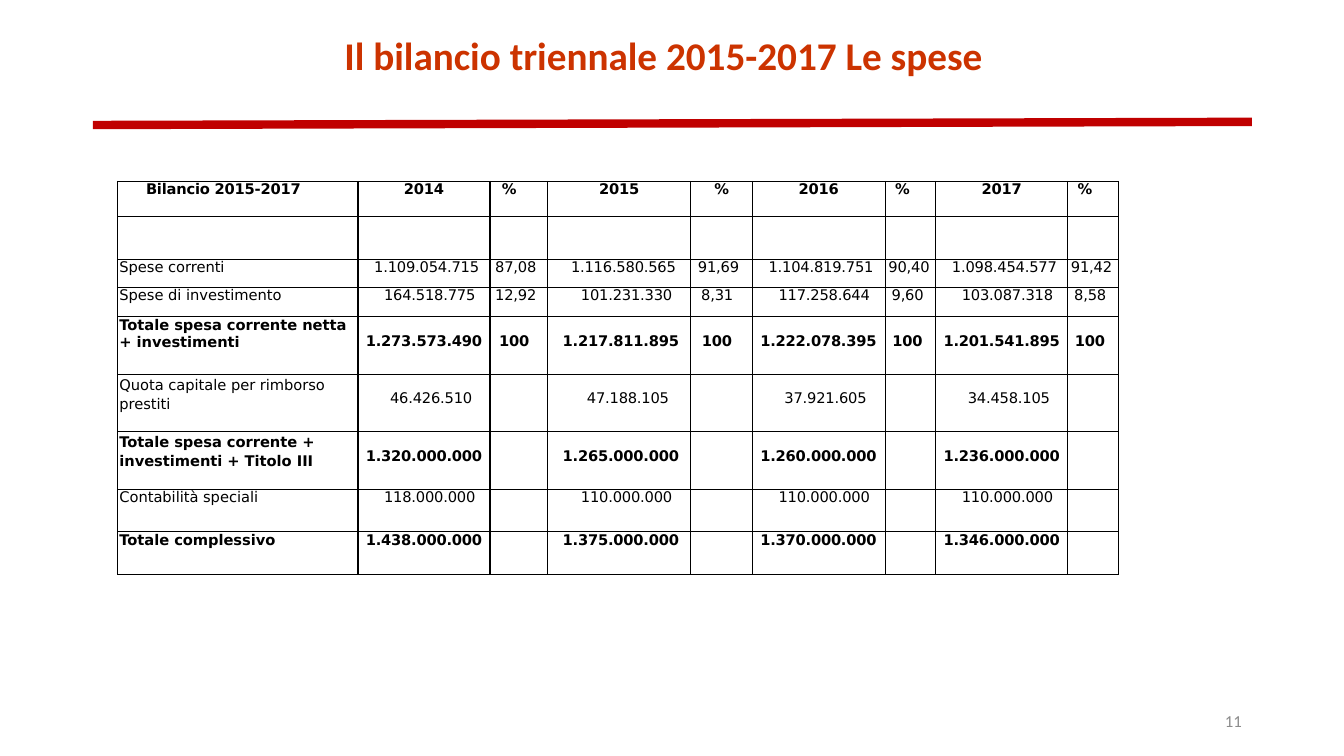
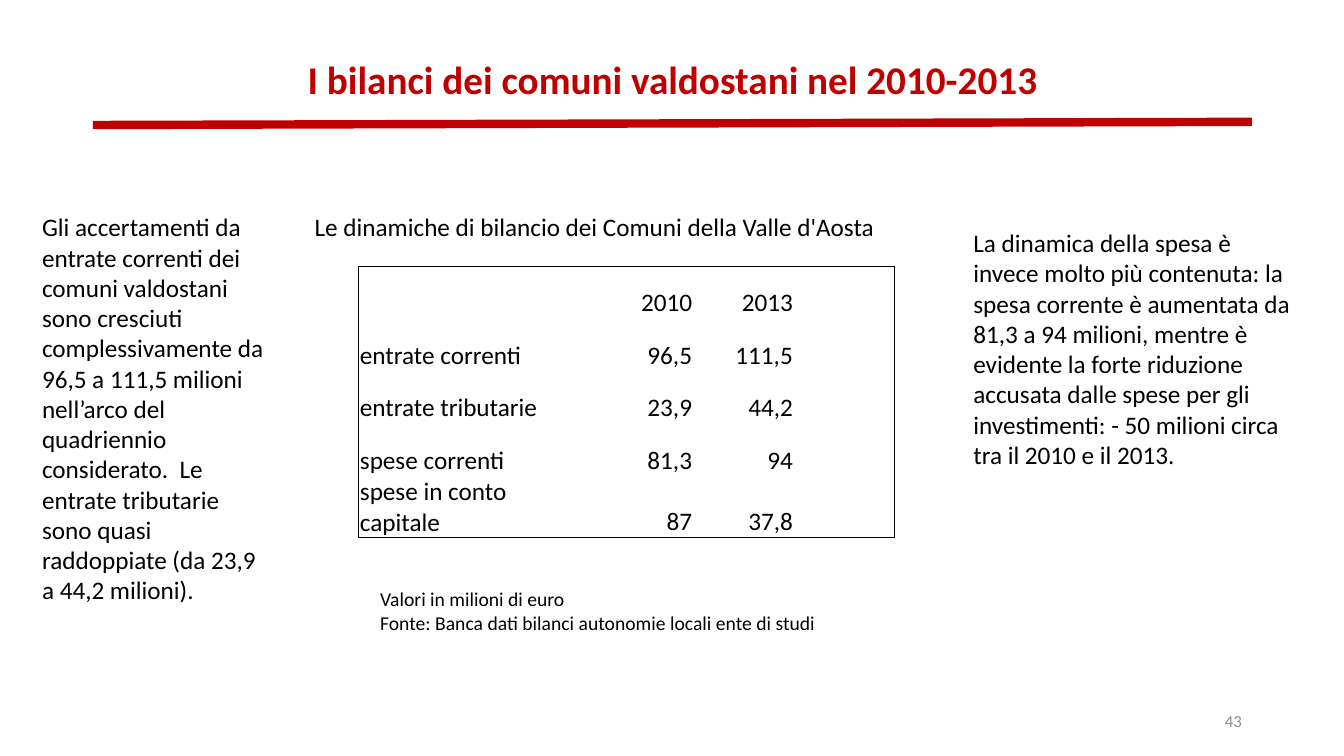
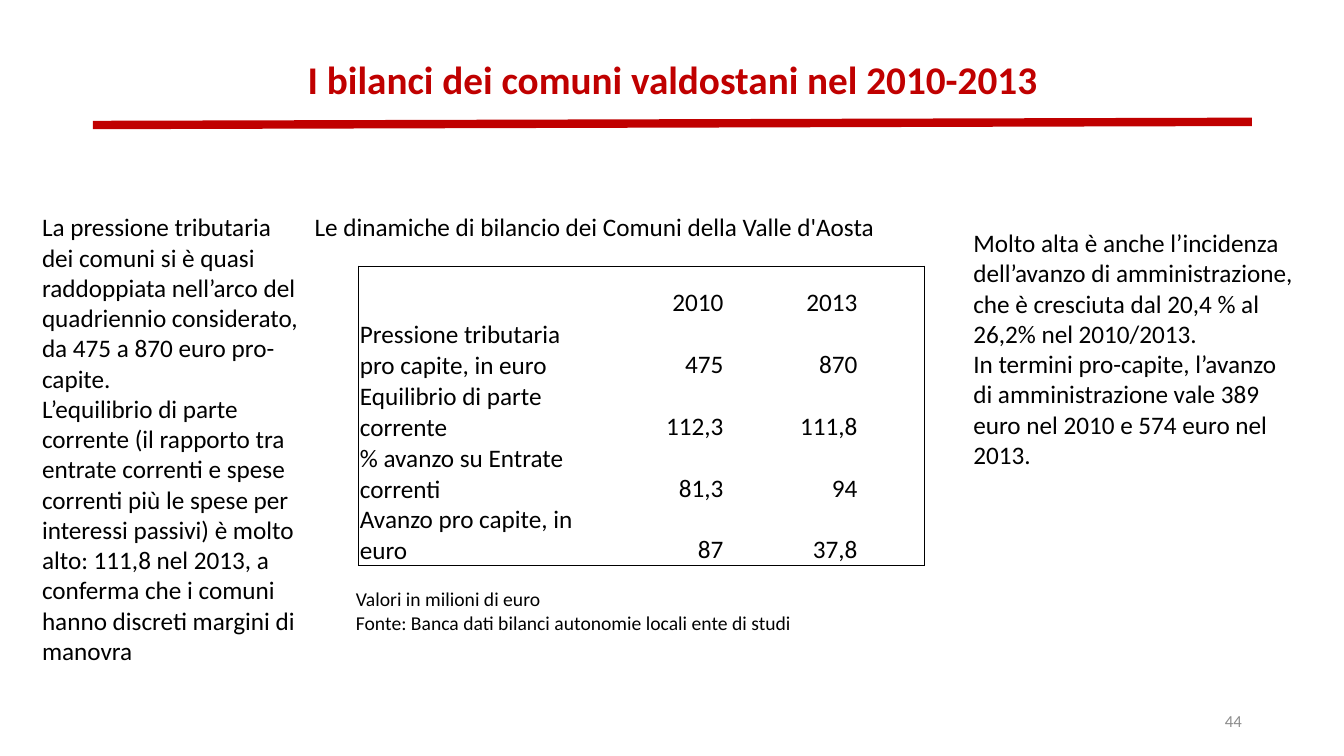
import lxml.etree
import pptx
import pptx.dml.color
import pptx.enum.shapes
import pptx.enum.text
import pptx.oxml.ns
import pptx.util

Cm = pptx.util.Cm
Pt = pptx.util.Pt
ALIGN = pptx.enum.text.PP_ALIGN
ANCHOR = pptx.enum.text.MSO_ANCHOR
qn = pptx.oxml.ns.qn

COLORS = {"rule": "C00000", "accent": "CC3300", "text": "000000", "number": "8C8C8C"}
SANS = "Calibri"
TABLE_FONT = "DejaVu Sans"

BUDGET_HEAD = ["Bilancio 2015-2017", "2014", "%", "2015", "%", "2016", "%", "2017", "%"]
BUDGET_COLS = [6.05, 3.33, 1.45, 3.61, 1.55, 3.35, 1.27, 3.33, 1.27]
BUDGET_ROWS = [
    (0.71, ["Spese correnti"],
     ["1.109.054.715", "1.116.580.565", "1.104.819.751", "1.098.454.577"],
     ["87,08", "91,69", "90,40", "91,42"]),
    (0.74, ["Spese di investimento"],
     ["164.518.775", "101.231.330", "117.258.644", "103.087.318"],
     ["12,92", "8,31", "9,60", "8,58"]),
    (1.45, ["Totale spesa corrente netta", "+ investimenti"],
     ["1.273.573.490", "1.217.811.895", "1.222.078.395", "1.201.541.895"], ["100"] * 4),
    (1.45, ["Quota capitale per rimborso prestiti"],
     ["46.426.510", "47.188.105", "37.921.605", "34.458.105"], [""] * 4),
    (1.45, ["Totale spesa corrente + investimenti + Titolo III"],
     ["1.320.000.000", "1.265.000.000", "1.260.000.000", "1.236.000.000"], [""] * 4),
    (1.07, ["Contabilità speciali"],
     ["118.000.000", "110.000.000", "110.000.000", "110.000.000"], [""] * 4),
    (1.07, ["Totale complessivo"],
     ["1.438.000.000", "1.375.000.000", "1.370.000.000", "1.346.000.000"], [""] * 4),
]
AMOUNT_INDENT = {(False, 13): 0.41, (False, 11): 0.66, (False, 10): 0.81, (True, 13): 0.2}
AMOUNT_SHIFT = [0, 0.18, 0, 0]
PERCENT_BASE = [0.13, 0.18, 0.08, 0.08]
PERCENT_INDENT = {5: 0, 4: 0.08, 3: 0.1}
HEAD_INDENT = {0: 0.71, 2: 0.3, 6: 0.25, 8: 0.25}

MUNICIPAL_SLIDES = [
    {
        "number": "43",
        "cols": [5.89, 2.54, 2.54, 2.54],
        "rows": [
            ["", "2010", "2013", ""],
            ["entrate correnti", "96,5", "111,5", ""],
            ["entrate tributarie", "23,9", "44,2", ""],
            ["spese correnti", "81,3", "94", ""],
            ["spese in conto capitale", "87", "37,8", ""],
        ],
        "note": (9.55, 11.89),
        "left_box": (0.81, 5.21, 6.3, 10.26),
        "left": ["Gli accertamenti da entrate correnti dei comuni valdostani sono cresciuti "
                 "complessivamente da 96,5 a 111,5 milioni  nell’arco del quadriennio "
                 "considerato.  Le entrate tributarie sono quasi raddoppiate "
                 "(da 23,9 a 44,2 milioni)."],
        "right": ["La dinamica della spesa è invece molto più contenuta: la spesa corrente è "
                  "aumentata da 81,3 a 94 milioni, mentre è evidente la forte riduzione "
                  "accusata dalle spese per gli investimenti: - 50 milioni circa tra il 2010 "
                  "e il 2013."],
    },
    {
        "number": "44",
        "cols": [5.64, 3.58, 3.38, 1.65],
        "rows": [
            ["", "2010", "2013", ""],
            ["Pressione tributaria\npro capite, in euro", "475", "870", ""],
            ["Equilibrio di parte corrente", "112,3", "111,8", ""],
            ["% avanzo su Entrate correnti", "81,3", "94", ""],
            ["Avanzo pro capite, in euro", "87", "37,8", ""],
        ],
        "note": (8.94, 12.5),
        "left_box": (0.81, 5.21, 6.99, 11.79),
        "left": ["La pressione tributaria dei comuni si è quasi raddoppiata nell’arco del "
                 "quadriennio considerato, da 475 a 870 euro pro-capite.",
                 "L’equilibrio di parte corrente (il rapporto tra entrate correnti e spese "
                 "correnti più le spese per interessi passivi) è molto alto: 111,8 nel 2013, "
                 "a conferma che i comuni hanno discreti margini di manovra"],
        "right": ["Molto alta è anche l’incidenza dell’avanzo di amministrazione, che è "
                  "cresciuta dal 20,4 % al 26,2% nel 2010/2013.",
                  "In termini pro-capite, l’avanzo di amministrazione vale 389 euro nel 2010 "
                  "e 574 euro nel 2013."],
    },
]


def rgb(name):
    """Return the named colour."""
    return pptx.dml.color.RGBColor.from_string(COLORS[name])


def write(tf, lines, size=18, color="text", font=SANS, bold=False, align=ALIGN.LEFT,
          spacing=None, indent=0, tracking=0):
    """Write one paragraph per line into a text frame."""
    tf.word_wrap = True
    for i, line in enumerate(lines):
        p = tf.add_paragraph() if i else tf.paragraphs[0]
        p.alignment = align
        if spacing:
            p.line_spacing = spacing
        if indent:
            p._p.get_or_add_pPr().set("marL", str(Cm(indent)))
        r = p.add_run()
        r.text = line
        r.font.size = Pt(size)
        r.font.name = font
        r.font.bold = bold
        r.font.color.rgb = rgb(color)
        if tracking:
            r._r.get_or_add_rPr().set("spc", str(tracking))


def add_text(s, box, lines, anchor=ANCHOR.TOP, **style):
    """Add a text box in the given box."""
    tf = s.shapes.add_textbox(*map(Cm, box)).text_frame
    tf.vertical_anchor = anchor
    write(tf, lines, **style)


def set_borders(cell, sides):
    """Draw a black line on the named sides and none on the others."""
    tcPr = cell._tc.get_or_add_tcPr()
    for i, side in enumerate("LRTB"):
        ln = lxml.etree.Element(qn("a:ln" + side), w=str(Pt(1)))
        if side in sides:
            fill = lxml.etree.SubElement(ln, qn("a:solidFill"))
            lxml.etree.SubElement(fill, qn("a:srgbClr"), val=COLORS["text"])
        else:
            lxml.etree.SubElement(ln, qn("a:noFill"))
        tcPr.insert(i, ln)


def add_grid(s, left, top, cols, rows, margin=0.0, anchor=ANCHOR.TOP):
    """Add a plain table with the given column widths and row heights."""
    table = s.shapes.add_table(len(rows), len(cols), Cm(left), Cm(top),
                               Cm(sum(cols)), Cm(sum(rows))).table
    table.first_row = table.horz_banding = False
    for column, width in zip(table.columns, cols):
        column.width = Cm(width)
    for row, height in zip(table.rows, rows):
        row.height = Cm(height)
    for cell in table.iter_cells():
        cell.fill.background()
        cell.margin_left = cell.margin_right = cell.margin_top = Cm(margin)
        cell.margin_bottom = 0
        cell.vertical_anchor = anchor
    return table


def add_frame(prs, title, number, box, color, anchor):
    """Add a slide with its rule, title and number."""
    s = prs.slides.add_slide(prs.slide_layouts[6])
    rule = s.shapes.add_connector(pptx.enum.shapes.MSO_CONNECTOR.STRAIGHT,
                                  Cm(2.34), Cm(3.15), Cm(31.55), Cm(3.07))
    rule.line.color.rgb = rgb("rule")
    rule.line.width = Pt(6)
    lxml.etree.SubElement(rule._element.spPr, qn("a:effectLst"))
    add_text(s, box, [title], anchor, size=28, color=color, bold=True,
             align=ALIGN.CENTER, spacing=0.9)
    add_text(s, (23.93, 17.65, 7.62, 1.02), [number], ANCHOR.MIDDLE, size=12,
             color="number", align=ALIGN.RIGHT)
    return s


def add_budget_table(s, left, top):
    """Add the three-year expenditure table."""
    heights = [0.89, 1.07] + [row[0] for row in BUDGET_ROWS]
    table = add_grid(s, left, top, BUDGET_COLS, heights)
    for cell in table.iter_cells():
        set_borders(cell, "LRTB")
    style = {"size": 10.5, "font": TABLE_FONT}
    for c, text in enumerate(BUDGET_HEAD):
        indent = HEAD_INDENT.get(c, 0)
        write(table.cell(0, c).text_frame, [text], bold=True, indent=indent,
              align=ALIGN.LEFT if indent else ALIGN.CENTER, tracking=-10, **style)
    for n, (height, label, amounts, percents) in enumerate(BUDGET_ROWS, 2):
        bold = label[0].startswith("Totale")
        tall = height > 1.4
        write(table.cell(n, 0).text_frame, label, bold=bold, indent=0.04,
              spacing=1.13 if tall and len(label) == 1 else None, **style)
        for y, (amount, percent) in enumerate(zip(amounts, percents)):
            values = [(amount, AMOUNT_INDENT[bold, len(amount)] + AMOUNT_SHIFT[y])]
            if percent:
                values.append((percent, PERCENT_BASE[y] + PERCENT_INDENT[len(percent)]))
            for c, (text, indent) in enumerate(values, 1 + 2 * y):
                cell = table.cell(n, c)
                cell.margin_top = Cm(0.4 if tall else 0)
                write(cell.text_frame, [text], bold=bold, indent=indent, tracking=-10, **style)


def add_municipal_table(s, left, top, cols, rows):
    """Add a table of municipal figures with an outer border only."""
    table = add_grid(s, left, top, cols, [1.32] * 4 + [1.4], 0.03, ANCHOR.BOTTOM)
    for i, row in enumerate(rows):
        for c, text in enumerate(row):
            cell = table.cell(i, c)
            edges = {"L": c == 0, "R": c == len(cols) - 1, "T": i == 0, "B": i == len(rows) - 1}
            set_borders(cell, [side for side, on in edges.items() if on])
            if text:
                write(cell.text_frame, text.split("\n"),
                      align=ALIGN.RIGHT if c else ALIGN.LEFT)


def add_caption(s, left, top, width, height, lines, size):
    """Add a borderless one-cell table holding a caption."""
    cell = add_grid(s, left, top, [width], [height], 0.03, ANCHOR.BOTTOM).cell(0, 0)
    set_borders(cell, "")
    write(cell.text_frame, lines, size=size)


def add_budget_slide(prs):
    """Add the expenditure slide."""
    s = add_frame(prs, "Il bilancio triennale 2015-2017 Le spese", "11",
                  (0.69, 0.81, 32.06, 2.41), "accent", ANCHOR.TOP)
    add_budget_table(s, 2.97, 4.57)


def add_municipal_slide(prs, data):
    """Add a slide with a municipal table between two texts."""
    s = add_frame(prs, "I bilanci dei comuni valdostani nel 2010-2013", data["number"],
                  (2.34, 1.02, 29.21, 2.06), "rule", ANCHOR.MIDDLE)
    add_municipal_table(s, 9.04, 6.71, data["cols"], data["rows"])
    add_caption(s, 7.9, 4.75, 14.76, 1.37,
                ["Le dinamiche di bilancio dei Comuni della Valle d'Aosta"], 18)
    left, width = data["note"]
    add_caption(s, left, 14.78, width, 0.53,
                ["Valori in milioni di euro",
                 "Fonte: Banca dati bilanci autonomie locali ente di studi"], 14)
    add_text(s, data["left_box"], data["left"])
    add_text(s, (24.28, 5.61, 8.64, 6.5), data["right"])


def main():
    """Build and save the presentation."""
    prs = pptx.Presentation()
    prs.slide_width, prs.slide_height = Cm(33.87), Cm(19.05)
    add_budget_slide(prs)
    for data in MUNICIPAL_SLIDES:
        add_municipal_slide(prs, data)
    prs.save("out.pptx")


if __name__ == "__main__":
    main()
